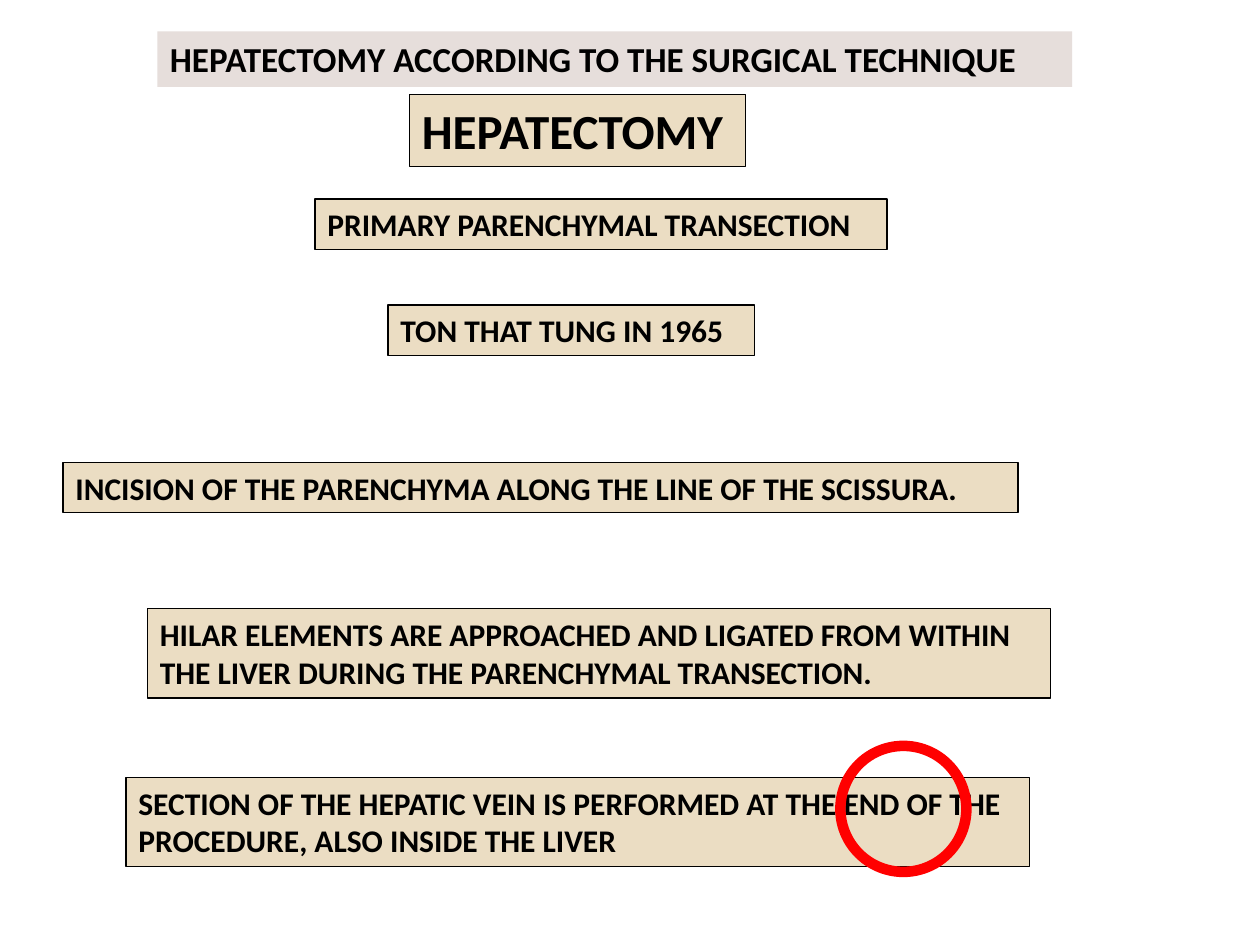
from pptx import Presentation
from pptx.dml.color import RGBColor
from pptx.enum.shapes import MSO_SHAPE
from pptx.enum.text import MSO_ANCHOR, PP_ALIGN
from pptx.util import Inches, Pt

RECT = MSO_SHAPE.RECTANGLE
OVAL = MSO_SHAPE.OVAL
TOP = MSO_ANCHOR.TOP
LEFT = PP_ALIGN.LEFT
BLACK, RED, SAND, ROSE = "000000", "FF0000", "EBDDC3", "E6DEDB"
ONE, TWO = 0.4, 0.71

STEPS = [
    ("PRIMARY PARENCHYMAL TRANSECTION", 2.5, 1.58, 4.54, ONE),
    ("TON THAT TUNG IN 1965", 3.08, 2.42, 2.91, ONE),
    ("INCISION OF THE PARENCHYMA ALONG THE LINE OF THE SCISSURA.",
     0.5, 3.67, 7.58, ONE),
    ("HILAR ELEMENTS ARE APPROACHED AND LIGATED FROM WITHIN "
     "THE LIVER DURING THE PARENCHYMAL TRANSECTION.",
     1.17, 4.83, 7.17, TWO),
    ("SECTION OF THE HEPATIC VEIN IS PERFORMED AT THE END OF THE "
     "PROCEDURE, ALSO INSIDE THE LIVER",
     1, 6.17, 7.17, TWO),
]


def color(code):
    """Turn a hex string into a colour."""
    return RGBColor.from_string(code)


def add_form(slide, kind, box, fill=None, line=None, width=0.75):
    """Add a flat preset shape; box is left, top, width, height in inches."""
    form = slide.shapes.add_shape(kind, *map(Inches, box))
    form.shadow.inherit = False
    if fill:
        form.fill.solid()
        form.fill.fore_color.rgb = color(fill)
    else:
        form.fill.background()
    if line:
        form.line.color.rgb = color(line)
        form.line.width = Pt(width)
    else:
        form.line.fill.background()
    return form


def put_text(form, text, size=18, bold=True, ink=BLACK, face="Calibri"):
    """Write left-aligned text at the top of a shape."""
    frame = form.text_frame
    frame.word_wrap = True
    frame.vertical_anchor = TOP
    para = frame.paragraphs[0]
    para.alignment = LEFT
    run = para.add_run()
    run.text = text
    run.font.name = face
    run.font.size = Pt(size)
    run.font.bold = bold
    run.font.color.rgb = color(ink)


def add_label(slide, text, box, fill=SAND, line=BLACK, **style):
    """Add a filled box with text."""
    put_text(add_form(slide, RECT, box, fill, line), text, **style)


def main():
    """Build and save the slide."""
    deck = Presentation()
    deck.slide_width, deck.slide_height = Inches(10), Inches(7.5)
    slide = deck.slides.add_slide(deck.slide_layouts[6])
    add_label(slide, "HEPATECTOMY ACCORDING TO THE SURGICAL TECHNIQUE",
              (1.25, 0.25, 7.26, 0.44), fill=ROSE, line=None, size=20)
    add_label(slide, "HEPATECTOMY", (3.25, 0.75, 2.67, 0.57), size=28)
    for text, *box in STEPS:
        add_label(slide, text, box)
    add_form(slide, OVAL, (6.67, 5.92, 1, 1), line=RED, width=6)
    deck.save("out.pptx")


if __name__ == "__main__":
    main()
